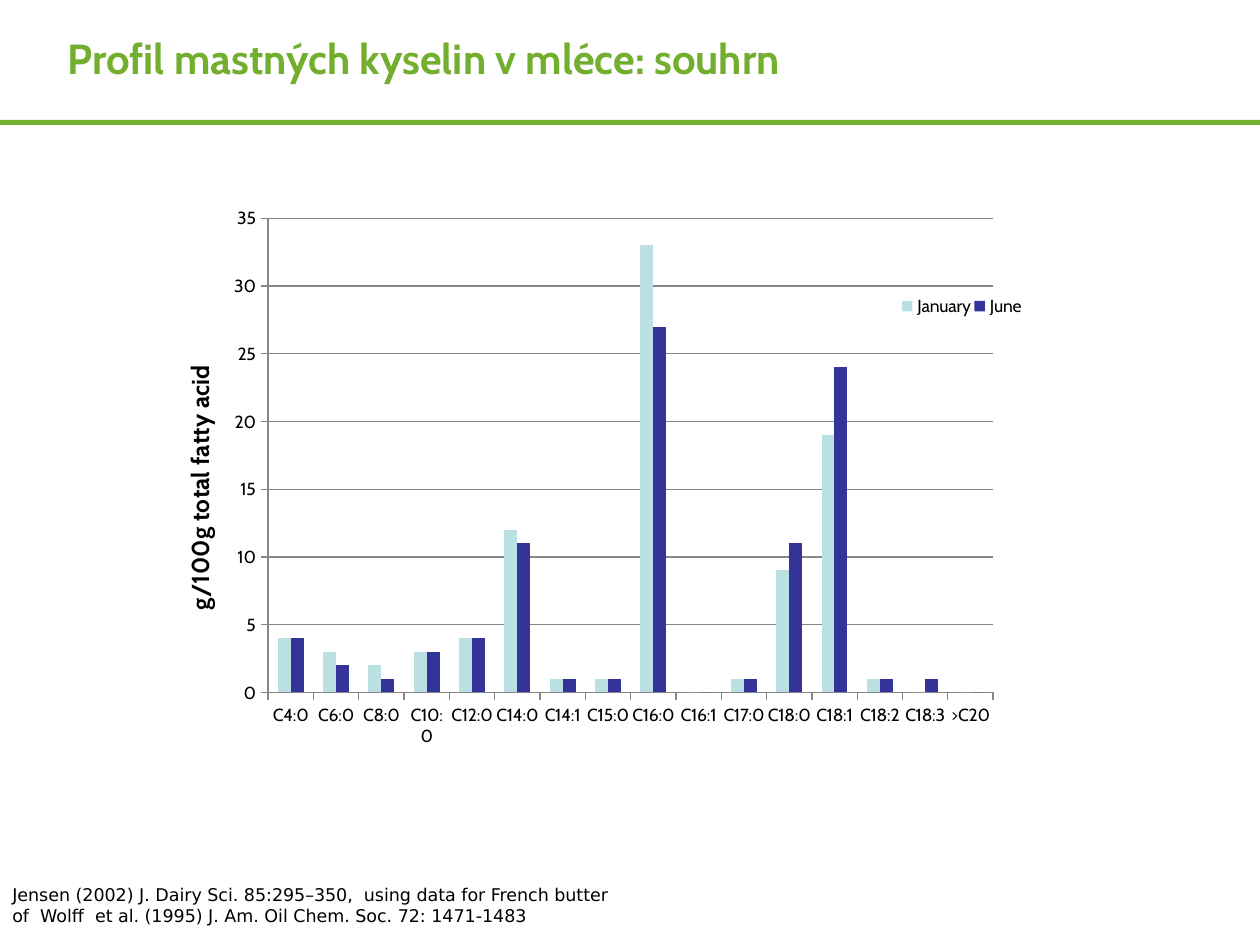
from lxml import etree
from pptx import Presentation
from pptx import util as u
from pptx.chart.data import CategoryChartData
from pptx.dml.color import RGBColor
from pptx.enum import chart as charts, shapes, text
from pptx.oxml.ns import qn

PX = u.Inches(1) // 126
GREEN, BLACK, GREY = "73AE2F", "000000", "868686"
TITLE = "Profil mastných kyselin v mléce: souhrn"
SOURCE = ("Jensen (2002) J. Dairy Sci. 85:295–350,  using data for French butter "
          "of  Wolff  et al. (1995) J. Am. Oil Chem. Soc. 72: 1471-1483")
AXIS_TITLE = "g/100g total fatty acid"
ACIDS = ["C4:0", "C6:0", "C8:0", "C10:0", "C12:0", "C14:0", "C14:1", "C15:0",
         "C16:0", "C16:1", "C17:0", "C18:0", "C18:1", "C18:2", "C18:3", ">C20"]
MONTHS = [
    ("January", "BBE0E3", [4, 3, 2, 3, 4, 12, 1, 1, 33, 0, 1, 9, 19, 1, 0, 0]),
    ("June", "333399", [4, 2, 1, 3, 4, 11, 1, 1, 27, 0, 1, 11, 24, 1, 1, 0]),
]


def box(*lengths):
    return [length * PX for length in lengths]


def color(value):
    return RGBColor.from_string(value)


def set_font(font, name, size, value, bold=False):
    font.name, font.size, font.bold = name, u.Pt(size), bold
    font.color.rgb = color(value)


def set_layout(element, index, **values):
    layout = element.find(qn("c:layout"))
    if layout is None:
        layout = etree.Element(qn("c:layout"))
        element.insert(index, layout)
    manual = etree.SubElement(layout, qn("c:manualLayout"))
    for tag, value in values.items():
        etree.SubElement(manual, qn("c:" + tag)).set("val", str(value))


def add_text(slide, place, content, anchor, *font):
    frame = slide.shapes.add_textbox(*box(*place)).text_frame
    frame.word_wrap = True
    frame.vertical_anchor = anchor
    paragraph = frame.paragraphs[0]
    paragraph.text = content
    set_font(paragraph.font, *font)


def add_acid_chart(slide):
    data = CategoryChartData()
    data.categories = ACIDS
    for name, _, values in MONTHS:
        data.add_series(name, values)
    chart = slide.shapes.add_chart(
        charts.XL_CHART_TYPE.COLUMN_CLUSTERED, *box(134, 185, 938, 655), data).chart
    chart.has_title = False
    set_font(chart.font, "Cabin", 10, BLACK)
    plot = chart.plots[0]
    plot.gap_width, plot.overlap, plot.vary_by_categories = 150, 0, False
    for series, (_, fill, _) in zip(plot.series, MONTHS):
        series.format.fill.solid()
        series.format.fill.fore_color.rgb = color(fill)

    axis = chart.value_axis
    axis.minimum_scale, axis.maximum_scale, axis.major_unit = 0, 35, 5
    axis.has_major_gridlines = True
    chart.category_axis.has_major_gridlines = False
    for line in (axis.format.line, chart.category_axis.format.line,
                 axis.major_gridlines.format.line):
        line.color.rgb, line.width = color(GREY), u.Pt(0.75)

    frame = axis.axis_title.text_frame
    frame.text = AXIS_TITLE
    set_font(frame.paragraphs[0].font, "Cabin", 14, BLACK, True)
    body = frame._txBody.find(qn("a:bodyPr"))
    body.set("rot", "-5400000")
    body.set("vert", "horz")

    chart.has_legend = True
    chart.legend.position = charts.XL_LEGEND_POSITION.RIGHT
    chart.legend.include_in_layout = False
    set_font(chart.legend.font, "Cabin", 10, BLACK)

    edges = dict(xMode="edge", yMode="edge")
    plot_area = chart._chartSpace.find(".//" + qn("c:plotArea"))
    set_layout(plot_area, 0, layoutTarget="inner", **edges, x=0.143, y=0.051, w=0.773, h=0.724)
    set_layout(axis.axis_title._element, 1, **edges, x=0.047, y=0.268)
    set_layout(chart.legend._element, 1, **edges, x=0.815, y=0.165, w=0.135, h=0.04)


def main():
    presentation = Presentation()
    presentation.slide_width, presentation.slide_height = u.Inches(10), u.Inches(7.5)
    slide = presentation.slides.add_slide(presentation.slide_layouts[6])
    rule = slide.shapes.add_shape(shapes.MSO_SHAPE.RECTANGLE, *box(0, 120, 1260, 5))
    rule.shadow.inherit = False
    rule.fill.solid()
    rule.fill.fore_color.rgb = color(GREEN)
    rule.line.fill.background()
    add_text(slide, (55, 0, 1134, 115), TITLE, text.MSO_ANCHOR.MIDDLE,
             "Cabin", 24, GREEN, True)
    add_acid_chart(slide)
    add_text(slide, (0, 878, 630, 55), SOURCE, text.MSO_ANCHOR.TOP,
             "DejaVu Sans", 10, BLACK)
    presentation.save("out.pptx")


if __name__ == "__main__":
    main()
